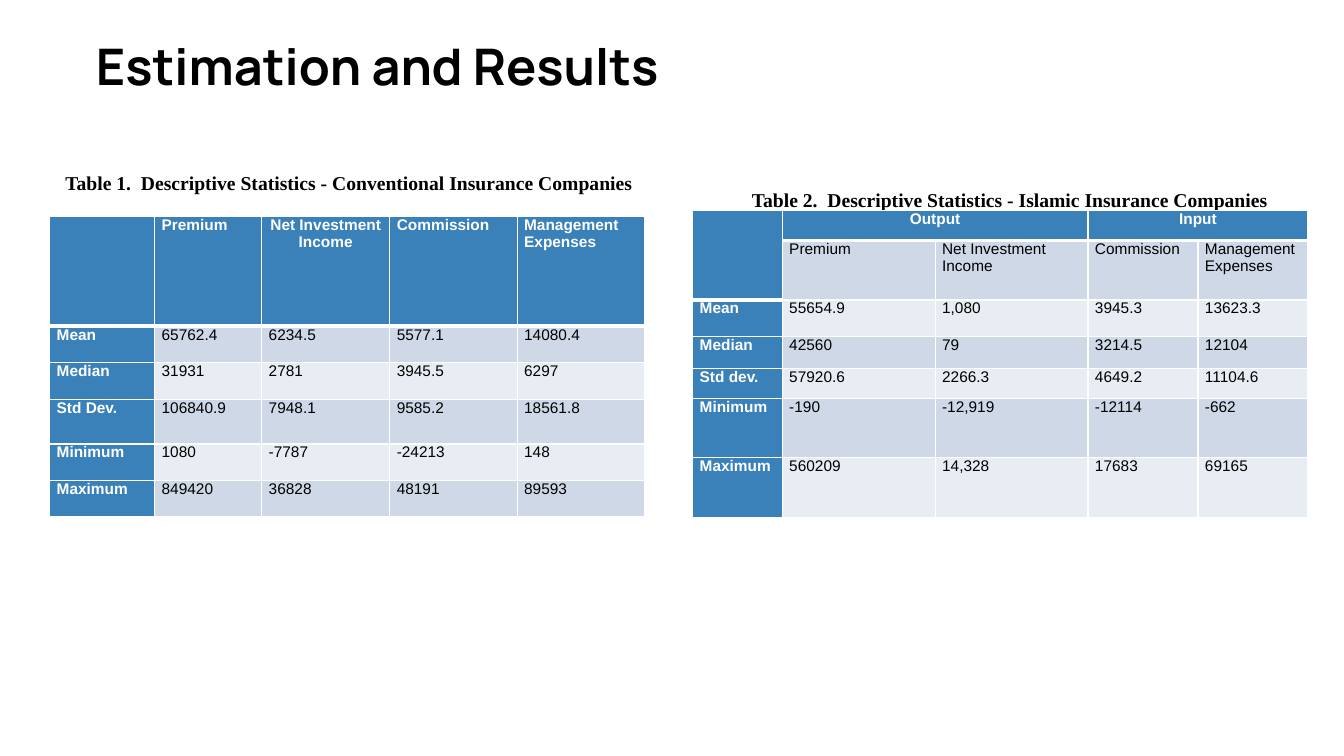
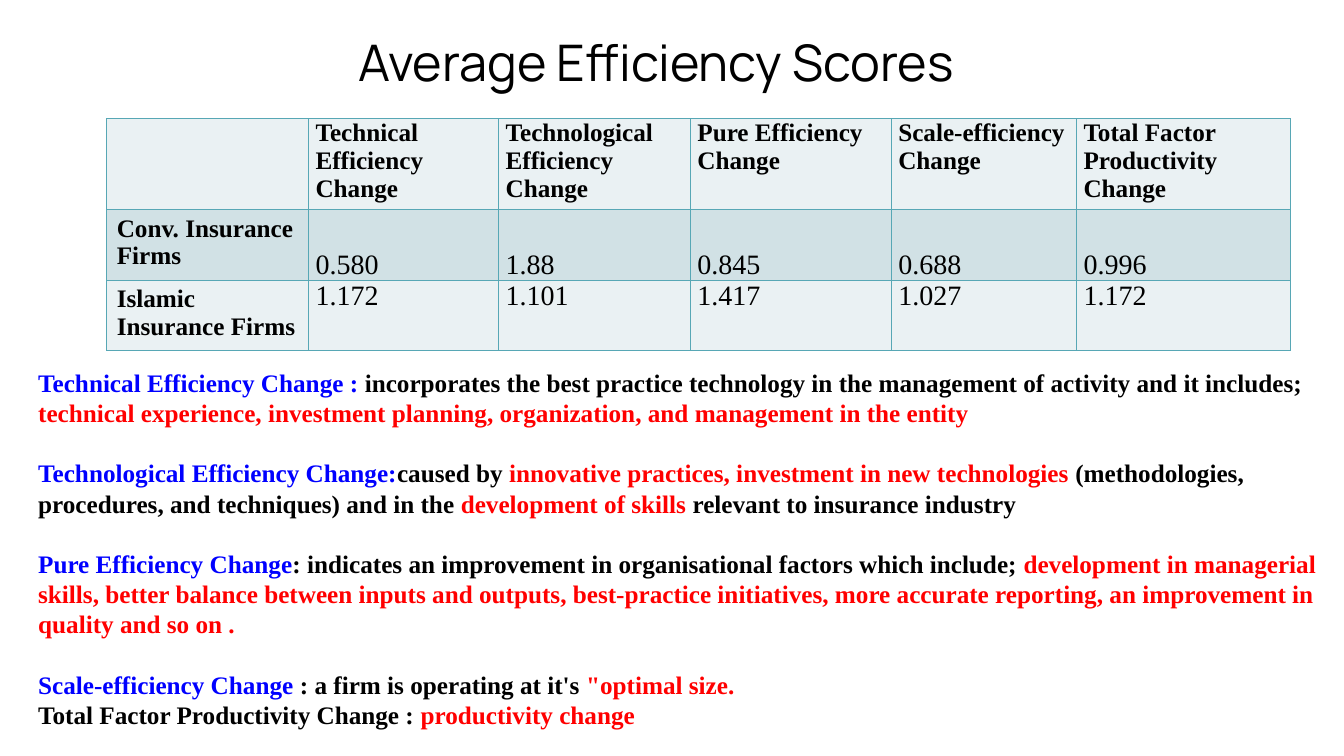
from dataclasses import dataclass
from typing import NamedTuple

import pptx
import pptx.dml.color
import pptx.enum.text
import pptx.oxml
import pptx.oxml.ns
import pptx.util

Pt = pptx.util.Pt
ALIGN = pptx.enum.text.PP_ALIGN
ANCHOR = pptx.enum.text.MSO_ANCHOR


@dataclass(frozen=True)
class Theme:
    black: str = "000000"
    white: str = "FFFFFF"
    blue: str = "0000FF"
    red: str = "FF0000"
    head: str = "3A81BA"
    mist: tuple[str, str] = ("E8EDF3", "CED8E7")
    teal: str = "57A7B5"
    pale: tuple[str, str] = ("EAF1F3", "D1E1E5")
    sans: str = "Manrope"
    serif: str = "Times New Roman"
    plain: str = "Arial"
    title: float = 36
    body: float = 18
    score: float = 20
    note: float = 14
    small: float = 11


THEME = Theme()


class Run(NamedTuple):
    text: str
    ink: str


class Para(NamedTuple):
    runs: list[Run]
    gap: float = 0


class Box(NamedTuple):
    left: float
    top: float
    width: float
    height: float


@dataclass(frozen=True)
class Skin:
    face: str
    label: float
    value: float
    ink: str
    edge: str
    rim: float
    bands: tuple[str, str]
    fill: str | None
    pad: tuple[float, float]


@dataclass(frozen=True)
class Grid:
    left: float
    top: float
    cols: list[float]
    rows: list[float]
    cells: list[list[str]]
    skin: Skin
    spans: tuple[tuple[int, int, int, int], ...] = ()
    center: tuple[tuple[int, int], ...] = ()
    low: tuple[int, ...] = ()


BLUE = Skin(THEME.plain, THEME.small, THEME.small, THEME.white, THEME.white,
            3, THEME.mist, THEME.head, (5, 0))
TEAL = Skin(THEME.serif, THEME.body, THEME.score, THEME.black, THEME.teal,
            1, THEME.pale, None, (7.2, 3.6))

FIRST = Grid(
    35.5, 154.8,
    [75, 76.5, 91.5, 91, 91],
    [78.2, 26.1, 26.1, 32, 26.1, 26.1],
    [
        ["", "Premium", "Net Investment Income", "Commission", "Management Expenses"],
        ["Mean", "65762.4", "6234.5", "5577.1", "14080.4"],
        ["Median", "31931", "2781", "3945.5", "6297"],
        ["Std Dev.", "106840.9", "7948.1", "9585.2", "18561.8"],
        ["Minimum", "1080", "-7787", "-24213", "148"],
        ["Maximum", "849420", "36828", "48191", "89593"],
    ],
    BLUE, center=((0, 2),))

SECOND = Grid(
    494.8, 150.3,
    [64, 109.2, 109.2, 78.6, 78.6],
    [21.5, 42.5, 26, 23, 21.2, 42.5, 42.5],
    [
        ["", "Output", "", "Input", ""],
        ["", "Premium", "Net Investment Income", "Commission", "Management Expenses"],
        ["Mean", "55654.9", "1,080", "3945.3", "13623.3"],
        ["Median", "42560", "79", "3214.5", "12104"],
        ["Std dev.", "57920.6", "2266.3", "4649.2", "11104.6"],
        ["Minimum", "-190", "-12,919", "-12114", "-662"],
        ["Maximum", "560209", "14,328", "17683", "69165"],
    ],
    BLUE,
    spans=((0, 0, 1, 0), (0, 1, 0, 2), (0, 3, 0, 4)),
    center=((0, 1), (0, 3)))

SCORES = Grid(
    76.2, 84.8,
    [144.2, 135.8, 137, 143.5, 132.3, 152.8],
    [62.8, 47.2, 47.2],
    [
        ["", "Technical Efficiency Change", "Technological Efficiency Change",
         "Pure Efficiency Change", "Scale-efficiency Change",
         "Total Factor Productivity Change"],
        ["Conv. Insurance Firms", "0.580", "1.88", "0.845", "0.688", "0.996"],
        ["Islamic Insurance Firms", "1.172", "1.101", "1.417", "1.027", "1.172"],
    ],
    TEAL, low=(1,))

NOTES = [
    Para([
        Run("Technical Efficiency Change : ", THEME.blue),
        Run("incorporates the best practice technology in the management of "
            "activity and it includes; ", THEME.black),
        Run("technical experience, investment planning, organization, and "
            "management in the entity", THEME.red),
    ]),
    Para([
        Run("Technological Efficiency Change:", THEME.blue),
        Run("caused by ", THEME.black),
        Run("innovative practices, investment in new technologies ", THEME.red),
        Run("(methodologies, procedures, and techniques) and in the ", THEME.black),
        Run("development of skills", THEME.red),
        Run(" relevant to insurance industry", THEME.black),
    ], 21.6),
    Para([
        Run("Pure Efficiency Change", THEME.blue),
        Run(": indicates an improvement in organisational factors which "
            "include; ", THEME.black),
        Run("development in managerial skills, better balance between inputs "
            "and outputs, best-practice initiatives, more accurate reporting, "
            "an improvement in quality and so on .", THEME.red),
    ], 21.6),
    Para([
        Run("Scale-efficiency Change ", THEME.blue),
        Run(": a firm is operating at it's ", THEME.black),
        Run('"optimal size.', THEME.red),
    ], 21.6),
    Para([
        Run("Total Factor Productivity Change : ", THEME.black),
        Run("productivity change", THEME.red),
    ]),
]


def tint(code: str) -> pptx.dml.color.RGBColor:
    return pptx.dml.color.RGBColor.from_string(code)


def write(frame, text: str | list[Para], *, face: str, size: float,
          ink: str = THEME.black, bold: bool = False,
          align=ALIGN.LEFT, line: float | None = None) -> None:
    paras = [Para([Run(text, ink)])] if isinstance(text, str) else text
    frame.word_wrap = True
    for spot, para in enumerate(paras):
        block = frame.add_paragraph() if spot else frame.paragraphs[0]
        block.alignment = align
        block.space_before = Pt(para.gap)
        block.font.size = Pt(size)
        if line:
            block.line_spacing = Pt(line)
        for part in para.runs:
            if not part.text:
                continue
            run = block.add_run()
            run.text = part.text
            run.font.name = face
            run.font.size = Pt(size)
            run.font.bold = bold
            run.font.color.rgb = tint(part.ink)


def label(slide, box: Box, text: str | list[Para], *,
          anchor=ANCHOR.MIDDLE, **form) -> None:
    frame = slide.shapes.add_textbox(*map(Pt, box)).text_frame
    frame.vertical_anchor = anchor
    write(frame, text, **form)


def head(slide, text: str, mid: float, base: float, bold: bool) -> None:
    width = 530
    label(slide, Box(mid - width / 2, base - 60, width, 60), text,
          anchor=ANCHOR.BOTTOM, face=THEME.sans, size=THEME.title,
          bold=bold, align=ALIGN.CENTER)


def border(cell, color: str, base: float) -> None:
    props = cell._tc.get_or_add_tcPr()
    for side, width in (("L", 1), ("R", 1), ("T", 1), ("B", base)):
        props.append(pptx.oxml.parse_xml(
            f'<a:ln{side} {pptx.oxml.ns.nsdecls("a")} w="{Pt(width)}">'
            f'<a:solidFill><a:srgbClr val="{color}"/></a:solidFill>'
            f'</a:ln{side}>'))


def table(slide, grid: Grid) -> None:
    skin = grid.skin
    area = Box(grid.left, grid.top, sum(grid.cols), sum(grid.rows))
    body = slide.shapes.add_table(
        len(grid.rows), len(grid.cols), *map(Pt, area)).table
    for col, width in zip(body.columns, grid.cols):
        col.width = Pt(width)
    for row, height in zip(body.rows, grid.rows):
        row.height = Pt(height)
    for top, left, end, right in grid.spans:
        body.cell(top, left).merge(body.cell(end, right))
    for r, line in enumerate(grid.cells):
        for c, text in enumerate(line):
            cell = body.cell(r, c)
            key = r == 0 or c == 0
            side, edge = skin.pad if r and c == 0 else (5, 0)
            cell.margin_left = cell.margin_right = Pt(side)
            cell.margin_top = cell.margin_bottom = Pt(edge)
            low = r in grid.low and c > 0
            cell.vertical_anchor = ANCHOR.BOTTOM if low else ANCHOR.TOP
            rim = r == 0 or any(
                top <= r <= end and left <= c <= right
                for top, left, end, right in grid.spans)
            border(cell, skin.edge, skin.rim if rim else 1)
            cell.fill.solid()
            cell.fill.fore_color.rgb = tint(
                skin.fill if key and skin.fill else skin.bands[r % 2])
            write(cell.text_frame, text, face=skin.face,
                  size=skin.label if key else skin.value,
                  ink=skin.ink if key else THEME.black, bold=key,
                  align=ALIGN.CENTER if (r, c) in grid.center else ALIGN.LEFT)


def stats(slide) -> None:
    head(slide, "Estimation and Results", 269.5, 72, True)
    form = dict(face=THEME.serif, size=THEME.note, bold=True)
    label(slide, Box(39.6, 118, 443.5, 24.5),
          "Table 1.  Descriptive Statistics - Conventional Insurance Companies", **form)
    label(slide, Box(530, 130.3, 410, 24.5),
          "Table 2.  Descriptive Statistics - Islamic Insurance Companies", **form)
    table(slide, FIRST)
    table(slide, SECOND)


def scores(slide) -> None:
    head(slide, "Average Efficiency Scores", 468.6, 69, False)
    table(slide, SCORES)
    label(slide, Box(20.2, 258.5, 928.8, 267), NOTES, anchor=ANCHOR.TOP,
          face=THEME.serif, size=THEME.body, bold=True, line=21.6)


def main() -> None:
    deck = pptx.Presentation()
    deck.slide_width, deck.slide_height = Pt(960), Pt(540)
    for draw in (stats, scores):
        draw(deck.slides.add_slide(deck.slide_layouts[6]))
    deck.save("out.pptx")


if __name__ == "__main__":
    main()
